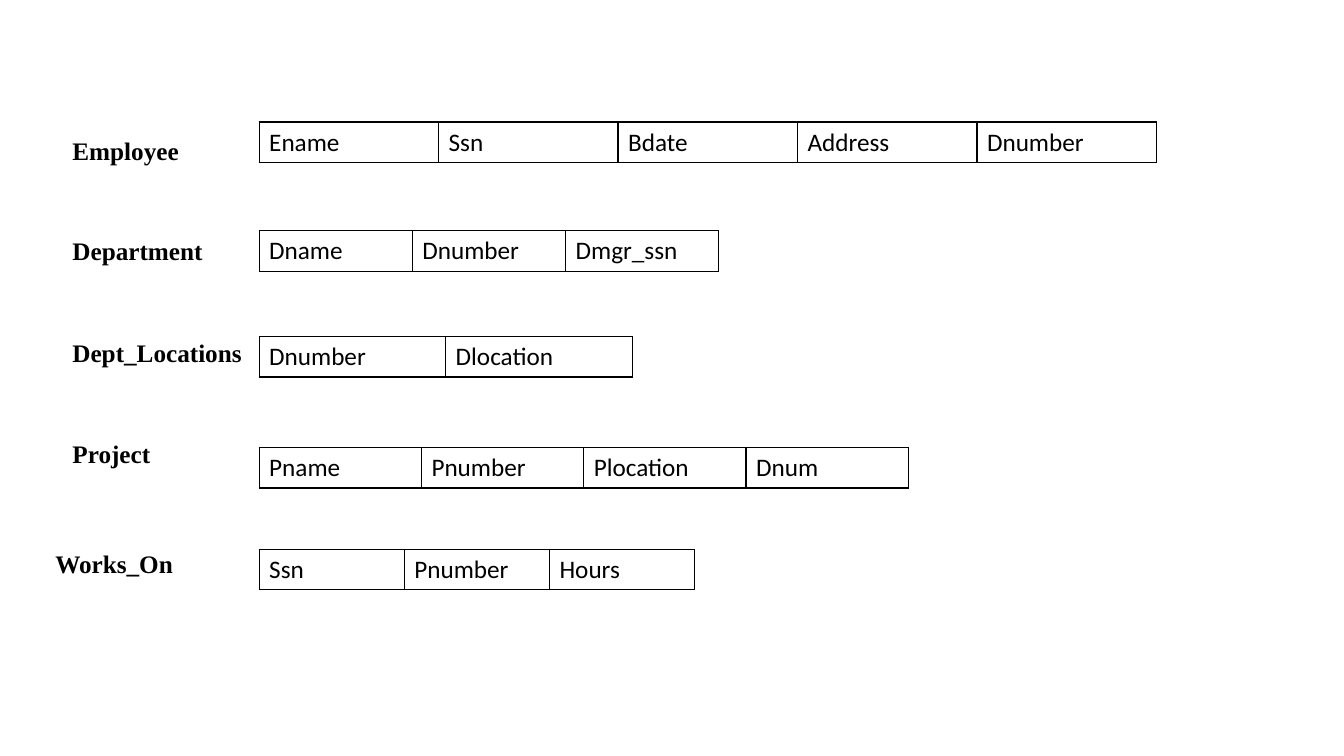
from dataclasses import dataclass

from lxml.etree import SubElement
from pptx import Presentation
from pptx.dml.color import RGBColor as RGB
from pptx.enum.text import MSO_AUTO_SIZE as AutoSize
from pptx.oxml.ns import qn
from pptx.util import Inches, Pt


@dataclass(frozen=True)
class Theme:
    ink: str = "000000"
    size: float = 18
    label_font: str = "Times New Roman"
    cell_font: str = "Calibri"
    border: float = 1


T = Theme()
TABLE_LEFT = 2.57
ROW_H = 0.4

RELATIONS = [
    ("Employee", 0.62, 1.29, 2.83, 1.21, 1.78,
     ["Ename", "Ssn", "Bdate", "Address", "Dnumber"]),
    ("Department", 0.62, 2.29, 1.59, 2.29, 1.52,
     ["Dname", "Dnumber", "Dmgr_ssn"]),
    ("Dept_Locations", 0.62, 3.3, 1.94, 3.34, 1.85,
     ["Dnumber", "Dlocation"]),
    ("Project", 0.62, 4.3, 1.94, 4.44, 1.61,
     ["Pname", "Pnumber", "Plocation", "Dnum"]),
    ("Works_On", 0.45, 5.39, 1.94, 5.45, 1.44,
     ["Ssn", "Pnumber", "Hours"]),
]


def add_run(tf, text, font, bold=False):
    r = tf.paragraphs[0].add_run()
    r.text = text
    r.font.name = font
    r.font.size = Pt(T.size)
    r.font.bold = bold
    r.font.color.rgb = RGB.from_string(T.ink)


def add_borders(cell):
    props = cell._tc.get_or_add_tcPr()
    for i, side in enumerate(("a:lnL", "a:lnR", "a:lnT", "a:lnB")):
        ln = props.makeelement(qn(side), {"w": str(Pt(T.border))})
        fill = SubElement(ln, qn("a:solidFill"))
        SubElement(fill, qn("a:srgbClr"), val=T.ink)
        props.insert(i, ln)


prs = Presentation()
prs.slide_width, prs.slide_height = Inches(13.33), Inches(7.5)
s = prs.slides.add_slide(prs.slide_layouts[6])

for name, left, top, width, table_top, col_w, fields in RELATIONS:
    frame = s.shapes.add_table(1, len(fields), Inches(TABLE_LEFT), Inches(table_top),
                               Inches(col_w * len(fields)), Inches(ROW_H))
    table = frame.table
    table.first_row = table.horz_banding = False
    for i, field in enumerate(fields):
        table.columns[i].width = Inches(col_w)
        cell = table.cell(0, i)
        cell.fill.background()
        add_borders(cell)
        add_run(cell.text_frame, field, T.cell_font)

    sp = s.shapes.add_textbox(Inches(left), Inches(top), Inches(width), Inches(ROW_H))
    tf = sp.text_frame
    tf.word_wrap = True
    tf.auto_size = AutoSize.SHAPE_TO_FIT_TEXT
    add_run(tf, name, T.label_font, bold=True)

prs.save("out.pptx")
